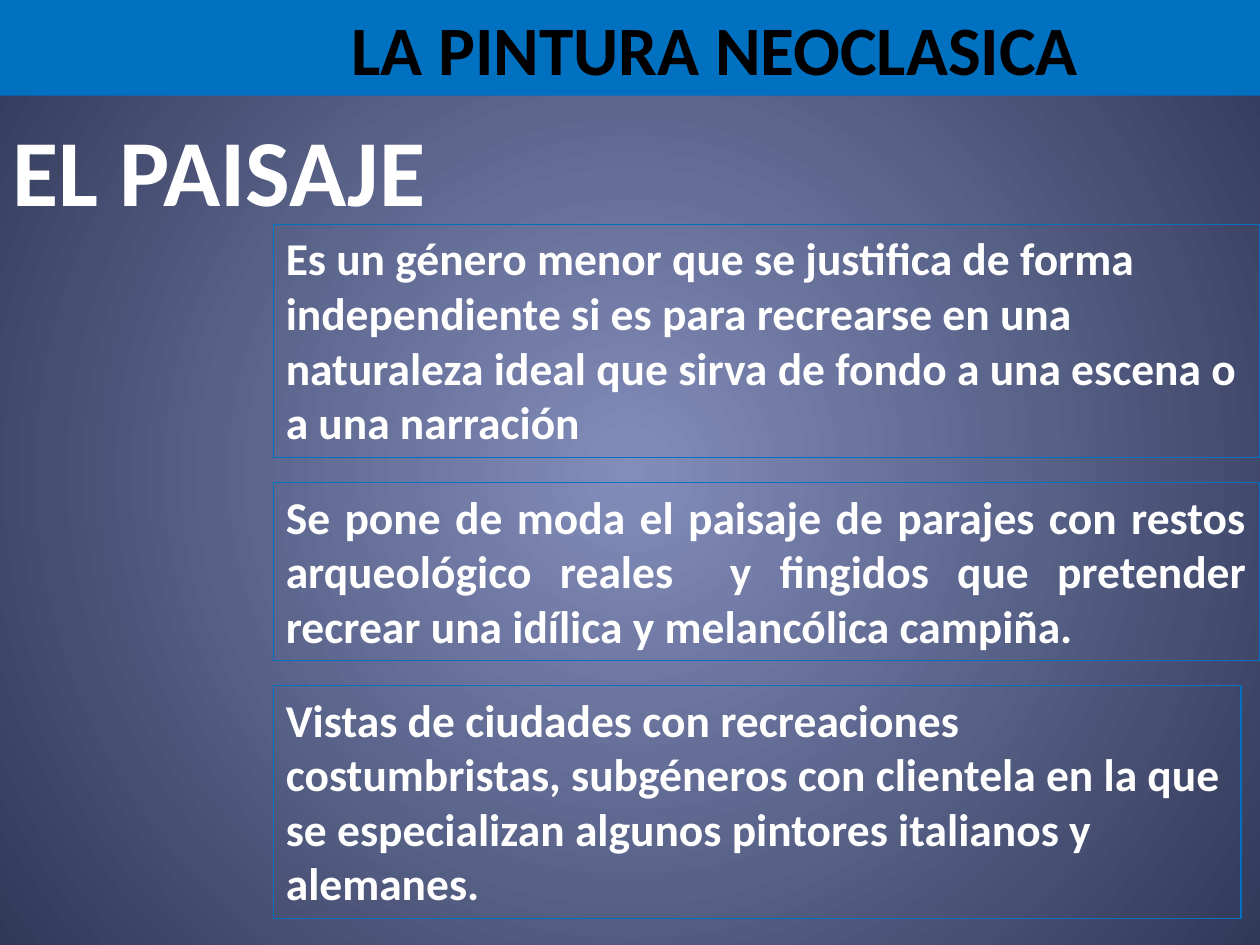
"""Build the slide on landscape in Neoclassical painting."""
from lxml import etree
from pptx import Presentation
from pptx.dml.color import RGBColor
from pptx.enum.shapes import MSO_SHAPE
from pptx.enum.text import MSO_ANCHOR, MSO_AUTO_SIZE, PP_ALIGN
from pptx.oxml import parse_xml
from pptx.util import Inches, Pt

RECT = MSO_SHAPE.RECTANGLE
MIDDLE, TOP = MSO_ANCHOR.MIDDLE, MSO_ANCHOR.TOP
LEFT, CENTER, JUSTIFY = PP_ALIGN.LEFT, PP_ALIGN.CENTER, PP_ALIGN.JUSTIFY
NO_FIT = MSO_AUTO_SIZE.NONE

TITLE = "LA PINTURA NEOCLASICA"
HEADING = "EL PAISAJE"
BOXES = [
    ("Es un género menor que se justifica de forma independiente si es para "
     "recrearse en una naturaleza ideal que sirva de fondo a una escena o a "
     "una narración", 7.83, 1.85, LEFT),
    ("Se pone de moda el paisaje de parajes con restos arqueológico "
     "reales  y fingidos que pretender recrear una idílica y melancólica "
     "campiña.", 7.83, 1.41, JUSTIFY),
    ("Vistas de ciudades con recreaciones costumbristas, subgéneros con "
     "clientela en la que se especializan algunos pintores italianos y "
     "alemanes.", 7.68, 1.85, LEFT),
]
COLORS = {"blue": "0070C0", "black": "000000", "white": "FFFFFF",
          "center": "838DBA", "edge": "313959"}
FONT = "Calibri"
BOX_LEFT, BOX_TOP, BOX_GAP = 2.17, 1.78, 0.2
A = "http://schemas.openxmlformats.org/drawingml/2006/main"


def rgb(name):
    return RGBColor.from_string(COLORS[name])


def write(sp, text, size, color, align=LEFT, anchor=TOP):
    tf = sp.text_frame
    tf.word_wrap = True
    tf.auto_size = NO_FIT
    tf.vertical_anchor = anchor
    p = tf.paragraphs[0]
    p.alignment = align
    r = p.add_run()
    r.text = text
    r.font.name = FONT
    r.font.size = Pt(size)
    r.font.bold = True
    r.font.color.rgb = rgb(color)


def paint_background(s):
    fill = s.background.fill
    fill.gradient()
    for stop, name in zip(fill.gradient_stops, ("center", "edge")):
        stop.color.rgb = rgb(name)
    grad = s.element.find(f".//{{{A}}}gradFill")
    grad.remove(grad.find(f"{{{A}}}lin"))
    circle = parse_xml(f'<a:path xmlns:a="{A}" path="circle"/>')
    etree.SubElement(circle, f"{{{A}}}fillToRect",
                     {side: "50000" for side in "ltrb"})
    grad.find(f"{{{A}}}gsLst").addnext(circle)


def add_title(s):
    sp = s.shapes.title
    sp.left, sp.top, sp.width, sp.height = map(Inches, (0, 0, 10, 0.76))
    sp.fill.solid()
    sp.fill.fore_color.rgb = rgb("blue")
    write(sp, TITLE, 39.6, "black", CENTER, MIDDLE)
    sp.text_frame.margin_left = Inches(1.45)


def add_boxes(s):
    top = BOX_TOP
    for text, width, height, align in BOXES:
        sp = s.shapes.add_shape(RECT, Inches(BOX_LEFT), Inches(top),
                                Inches(width), Inches(height))
        sp.shadow.inherit = False
        sp.fill.background()
        sp.line.color.rgb = rgb("blue")
        sp.line.width = Pt(0.75)
        write(sp, text, 26, "white", align)
        top += height + BOX_GAP


def main():
    prs = Presentation()
    prs.slide_width, prs.slide_height = Inches(10), Inches(7.5)
    s = prs.slides.add_slide(prs.slide_layouts[5])
    paint_background(s)
    add_title(s)
    heading = s.shapes.add_textbox(*map(Inches, (0, 0.84, 10, 1.01)))
    write(heading, HEADING, 54, "white")
    add_boxes(s)
    prs.save("out.pptx")


if __name__ == "__main__":
    main()
